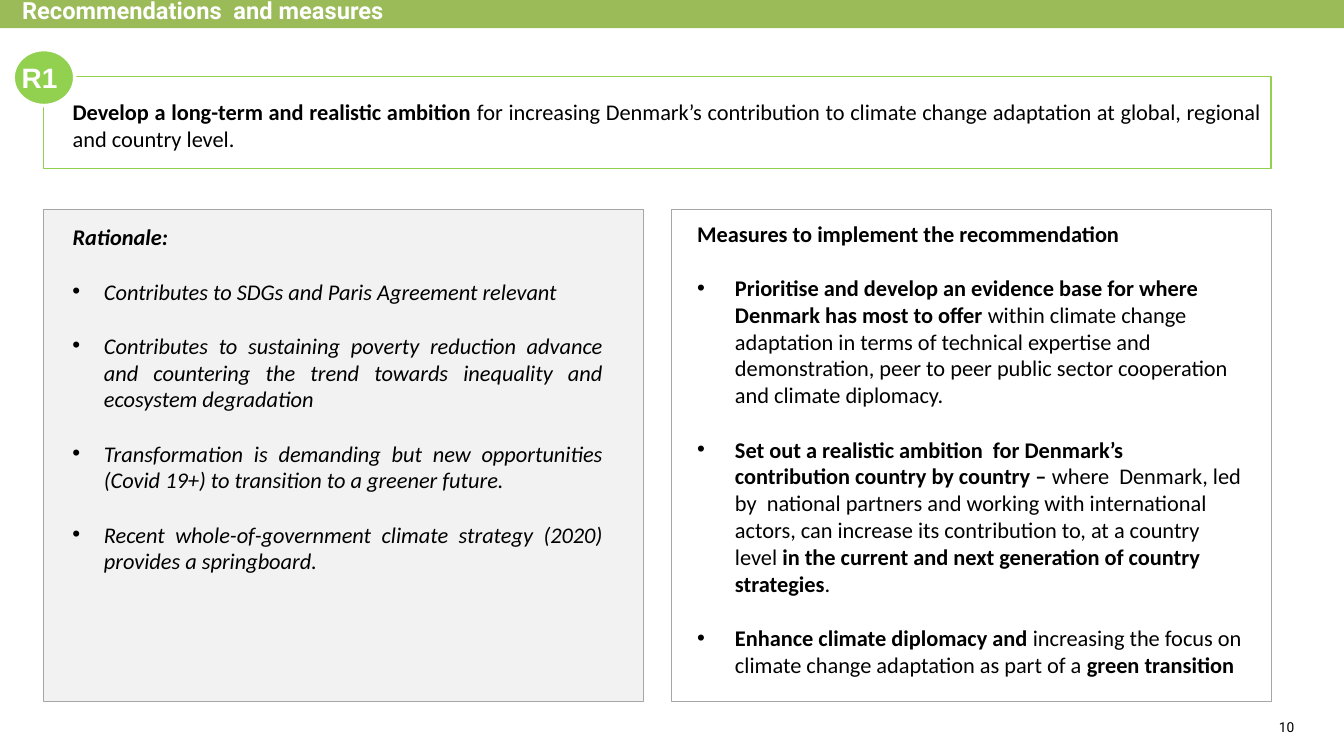
"""Build the slide that presents recommendation R1 with its rationale and measures."""
from lxml.etree import SubElement
from pptx import Presentation
from pptx.dml.color import RGBColor
from pptx.enum.shapes import MSO_SHAPE
from pptx.enum.text import MSO_ANCHOR, MSO_AUTO_SIZE, PP_ALIGN
from pptx.oxml.ns import qn
from pptx.util import Pt

BLACK = RGBColor(0x00, 0x00, 0x00)
WHITE = RGBColor(0xFF, 0xFF, 0xFF)
BAR_GREEN = RGBColor(0x9B, 0xBB, 0x59)
GREEN = RGBColor(0x92, 0xD0, 0x50)
PALE_GREY = RGBColor(0xF2, 0xF2, 0xF2)
BORDER_GREY = RGBColor(0xA6, 0xA6, 0xA6)

LEFT = 31
PANEL_TOP, PANEL_WIDTH, PANEL_HEIGHT = 149.8, 428.4, 351.4
RIGHT_PANEL_LEFT = 479.6
BLANK_LINE = 19.5

RECOMMENDATION = (
    "Develop a long-term and realistic ambition ",
    "for increasing Denmark’s contribution to climate change adaptation at global, "
    "regional and country level.",
)
RATIONALE = [
    ("", "Contributes to SDGs and Paris Agreement relevant"),
    ("", "Contributes to sustaining poverty reduction advance and countering the trend "
         "towards inequality and ecosystem degradation"),
    ("", "Transformation is demanding but new opportunities (Covid 19+) to transition "
         "to a greener future."),
    ("", "Recent whole-of-government climate strategy (2020) provides a springboard."),
]
MEASURES = [
    ("Prioritise and develop an evidence base for where Denmark has most to offer ",
     "within climate change adaptation in terms of technical expertise and "
     "demonstration, peer to peer public sector cooperation and climate diplomacy."),
    ("Set out a realistic ambition  for Denmark’s contribution country by country – ",
     "where  Denmark, led by  national partners and working with international actors, "
     "can increase its contribution to, at a country level ",
     "in the current and next generation of country strategies", "."),
    ("Enhance climate diplomacy and ",
     "increasing the focus on climate change adaptation as part of a ",
     "green transition"),
]


def place(box, left, top, width, height):
    """Move and size a box, in points."""
    box.left, box.top, box.width, box.height = map(Pt, (left, top, width, height))


def set_frame(frame, insets, anchor=MSO_ANCHOR.TOP, wrap=True):
    """Set the insets (left, top, right, bottom), anchor and wrapping of a frame."""
    frame.margin_left, frame.margin_top, frame.margin_right, frame.margin_bottom = map(Pt, insets)
    frame.vertical_anchor = anchor
    frame.word_wrap = wrap
    frame.auto_size = MSO_AUTO_SIZE.NONE


def set_font(font, name, size, color, bold=False, italic=False):
    """Give a font its face, size, colour and style."""
    font.name, font.size = name, Pt(size)
    font.color.rgb = color
    font.bold, font.italic = bold, italic


def set_outline(box, color, width):
    """Draw the border of a box."""
    box.line.color.rgb = color
    box.line.width = Pt(width)


def write_label(frame, text, align, name, size, color, bold):
    """Write one line of uniform text."""
    frame.text = text
    para = frame.paragraphs[0]
    para.alignment = align
    set_font(para.runs[0].font, name, size, color, bold)


def write_spans(para, spans, align, italic=False):
    """Write spans that alternate between bold and regular."""
    para.alignment = align
    for index, text in enumerate(spans):
        if text:
            span = para.add_run()
            span.text = text
            set_font(span.font, "Calibri", 16, BLACK, index % 2 == 0, italic)


def set_bullet(para, margin, hanging=0):
    """Indent a paragraph, with a bullet when it has a hanging indent."""
    properties = para._p.get_or_add_pPr()
    properties.set("marL", str(Pt(margin)))
    properties.set("indent", str(Pt(-hanging)))
    if hanging:
        SubElement(properties, qn("a:buFont")).set("typeface", "Arial")
        SubElement(properties, qn("a:buChar")).set("char", "•")
    else:
        SubElement(properties, qn("a:buNone"))


def add_shape(page, kind, left, top, width, height):
    """Add a preset shape without shadow."""
    shape = page.shapes.add_shape(kind, *map(Pt, (left, top, width, height)))
    shape.shadow.inherit = False
    return shape


def fill_title(title):
    """Turn the title placeholder into the green bar."""
    place(title, 0, -5.8, 960, 26)
    title.fill.solid()
    title.fill.fore_color.rgb = BAR_GREEN
    set_frame(title.text_frame, (15.8, 2.9, 2.9, 2.9), MSO_ANCHOR.MIDDLE)
    write_label(title.text_frame, "Recommendations  and measures",
                PP_ALIGN.LEFT, "Roboto", 16.9, WHITE, True)


def fill_panel(panel, left, insets, heading, items, heading_margin, margin, hanging, align, italic):
    """Turn a body placeholder into a bordered panel with a heading and a list."""
    place(panel, left, PANEL_TOP, PANEL_WIDTH, PANEL_HEIGHT)
    set_outline(panel, BORDER_GREY, 0.75)
    frame = panel.text_frame
    set_frame(frame, insets)
    para = frame.paragraphs[0]
    set_bullet(para, heading_margin)
    para.space_before = Pt(0)
    write_spans(para, (heading,), align, italic)
    for spans in items:
        para = frame.add_paragraph()
        set_bullet(para, margin, hanging)
        para.space_before = Pt(BLANK_LINE)
        write_spans(para, spans, align, italic)


def add_recommendation(page):
    """Add the outlined recommendation and its round badge."""
    box = add_shape(page, MSO_SHAPE.RECTANGLE, LEFT, 54.8, 877, 65.4)
    box.fill.background()
    set_outline(box, GREEN, 1)
    set_frame(box.text_frame, (20.9, 15.2, 7.2, 3.6))
    write_spans(box.text_frame.paragraphs[0], RECOMMENDATION, PP_ALIGN.JUSTIFY)

    badge = add_shape(page, MSO_SHAPE.OVAL, 9.4, 35.4, 44, 40)
    badge.fill.solid()
    badge.fill.fore_color.rgb = GREEN
    set_outline(badge, WHITE, 2.5)
    set_frame(badge.text_frame, (0, 0, 6, 0), MSO_ANCHOR.MIDDLE, wrap=False)
    write_label(badge.text_frame, "R1", PP_ALIGN.CENTER, "Arial", 20, WHITE, True)


def add_page_number(page):
    """Add the page number at the lower right."""
    box = page.shapes.add_textbox(*map(Pt, (908.6, 509, 20.2, 20.2)))
    set_frame(box.text_frame, (4.3, 4.3, 4.3, 4.3), wrap=False)
    write_label(box.text_frame, "10", PP_ALIGN.RIGHT, "Roboto", 9.8, BLACK, False)


def main():
    """Build and save the deck."""
    deck = Presentation()
    deck.slide_width, deck.slide_height = Pt(960), Pt(540)
    page = deck.slides.add_slide(deck.slide_layouts[3])
    title, rationale, measures = page.placeholders

    fill_title(title)
    rationale.fill.solid()
    rationale.fill.fore_color.rgb = PALE_GREY
    fill_panel(rationale, LEFT, (7.2, 9.8, 28.8, 3.6), "Rationale:", RATIONALE,
               13.7, 36, 22.5, PP_ALIGN.JUSTIFY, True)
    fill_panel(measures, RIGHT_PANEL_LEFT, (18.4, 7.2, 20.2, 3.6),
               "Measures to implement the recommendation", MEASURES,
               0, 27, 27, PP_ALIGN.LEFT, False)
    add_recommendation(page)
    add_page_number(page)
    deck.save("out.pptx")


if __name__ == "__main__":
    main()
